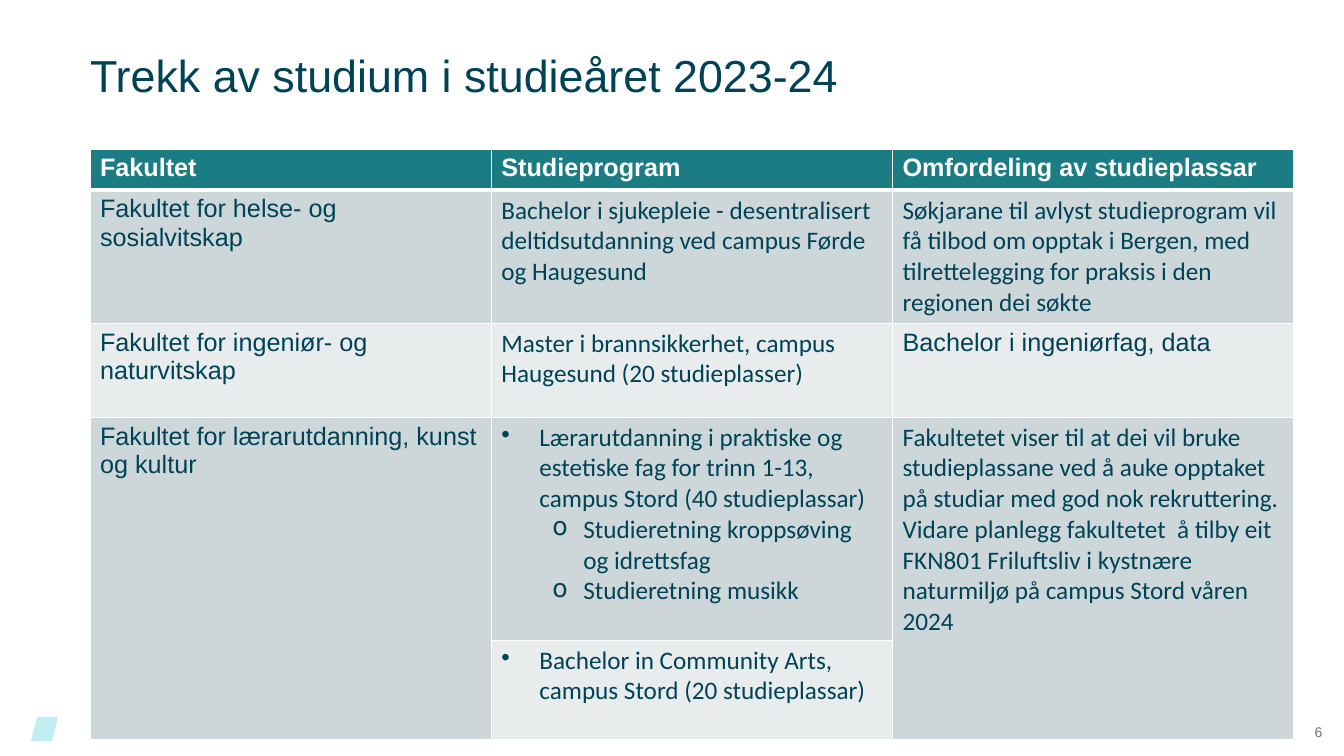
"""Build the slide on study programmes withdrawn in 2023-24."""
from dataclasses import dataclass

from lxml import etree
from pptx import Presentation
from pptx import util as u
from pptx.dml.color import RGBColor
from pptx.enum import shapes, text
from pptx.oxml.ns import qn

PX = 9071.43
NAVY = RGBColor(0x00, 0x43, 0x57)
TEAL = RGBColor(0x1B, 0x7C, 0x83)
DARK_BAND = RGBColor(0xCD, 0xD7, 0xD9)
LIGHT_BAND = RGBColor(0xE8, 0xEC, 0xED)
WHITE = RGBColor(0xFF, 0xFF, 0xFF)
AQUA = RGBColor(0xC1, 0xEC, 0xF2)
GREY = RGBColor(0x73, 0x73, 0x73)
SANS, HUMANIST = "Arial", "Calibri"


@dataclass(frozen=True)
class Bullet:
    char: str
    level: int
    margin: int
    hanging: int


@dataclass(frozen=True)
class Entry:
    words: str
    font: str = HUMANIST
    bullet: Bullet | None = None


@dataclass(frozen=True)
class Row:
    height: int
    fill: RGBColor
    cells: tuple[tuple[Entry, ...], ...]


PROGRAMME = Bullet("•", 0, 38, 38)
BRANCH = Bullet("o", 1, 82, 31)

ROWS = (
    Row(41, TEAL, (
        (Entry("Fakultet", SANS),),
        (Entry("Studieprogram", SANS),),
        (Entry("Omfordeling av studieplassar", SANS),))),
    Row(133, DARK_BAND, (
        (Entry("Fakultet for helse- og sosialvitskap", SANS),),
        (Entry("Bachelor i sjukepleie - desentralisert deltidsutdanning "
               "ved campus Førde og Haugesund"),),
        (Entry("Søkjarane til avlyst studieprogram vil få tilbod om opptak i Bergen, "
               "med tilrettelegging for praksis i den regionen dei søkte"),))),
    Row(94, LIGHT_BAND, (
        (Entry("Fakultet for ingeniør- og naturvitskap", SANS),),
        (Entry("Master i brannsikkerhet, campus Haugesund (20 studieplasser)"),),
        (Entry("Bachelor i ingeniørfag, data", SANS),))),
    Row(223, DARK_BAND, (
        (Entry("Fakultet for lærarutdanning, kunst og kultur", SANS),),
        (Entry("Lærarutdanning i praktiske og estetiske fag for trinn 1-13, "
               "campus Stord (40 studieplassar)", bullet=PROGRAMME),
         Entry("Studieretning kroppsøving og idrettsfag", bullet=BRANCH),
         Entry("Studieretning musikk", bullet=BRANCH)),
        (Entry("Fakultetet viser til at dei vil bruke studieplassane ved å auke opptaket "
               "på studiar med god nok rekruttering. Vidare planlegg fakultetet  å tilby eit "
               "FKN801 Friluftsliv i kystnære naturmiljø på campus Stord våren 2024"),))),
    Row(100, LIGHT_BAND, (
        (),
        (Entry("Bachelor in Community Arts, campus Stord (20 studieplassar)",
               bullet=PROGRAMME),),
        ())),
)


def px(length: int) -> int:
    """Turn pixels into EMU."""
    return round(length * PX)


def style(paragraph, font: str, size: int, color: RGBColor, bold: bool = False) -> None:
    """Set the font of a whole paragraph."""
    paragraph.font.name = font
    paragraph.font.size = u.Pt(size)
    paragraph.font.color.rgb = color
    paragraph.font.bold = bold


def set_frame(frame) -> None:
    """Give a text frame no insets and centre it vertically."""
    frame.margin_left = frame.margin_top = frame.margin_right = frame.margin_bottom = 0
    frame.vertical_anchor = text.MSO_ANCHOR.MIDDLE
    frame.auto_size = text.MSO_AUTO_SIZE.NONE
    frame.word_wrap = True


def add_bullet(paragraph, bullet: Bullet) -> None:
    """Hang a bullet in front of a paragraph."""
    paragraph.level = bullet.level
    properties = paragraph._p.get_or_add_pPr()
    properties.set("marL", str(px(bullet.margin)))
    properties.set("indent", str(-px(bullet.hanging)))
    mark = etree.Element(qn("a:buChar"), char=bullet.char)
    properties.insert(0, mark)


def add_borders(cell, top: int, bottom: int) -> None:
    """Draw white borders, with top and bottom widths in points."""
    properties = cell._tc.get_or_add_tcPr()
    widths = {"lnL": 1, "lnR": 1, "lnT": top, "lnB": bottom}
    for position, (side, width) in enumerate(widths.items()):
        line = etree.Element(qn(f"a:{side}"), w=str(u.Pt(width)))
        fill = etree.SubElement(line, qn("a:solidFill"))
        etree.SubElement(fill, qn("a:srgbClr"), val=str(WHITE))
        properties.insert(position, line)


def fill_cell(cell, entries: tuple[Entry, ...], fill: RGBColor, is_header: bool) -> None:
    """Write the entries into a cell and colour it."""
    cell.fill.solid()
    cell.fill.fore_color.rgb = fill
    for index, entry in enumerate(entries):
        frame = cell.text_frame
        paragraph = frame.add_paragraph() if index else frame.paragraphs[0]
        paragraph.text = entry.words
        style(paragraph, entry.font, 18, WHITE if is_header else NAVY, is_header)
        if entry.bullet:
            add_bullet(paragraph, entry.bullet)


def add_programmes(slide) -> None:
    """Add the table of faculties and programmes."""
    height = sum(row.height for row in ROWS)
    table = slide.shapes.add_table(
        len(ROWS), 3, px(90), px(149), px(1204), px(height)).table
    for index, row in enumerate(ROWS):
        table.rows[index].height = px(row.height)
        for column, entries in enumerate(row.cells):
            cell = table.cell(index, column)
            fill_cell(cell, entries, row.fill, index == 0)
            add_borders(cell, 3 if index == 1 else 1, 3 if index == 0 else 1)
    for column in (0, 2):
        table.cell(3, column).merge(table.cell(4, column))


def add_title(slide) -> None:
    """Place and fill the title."""
    title = slide.shapes.title
    title.left, title.top, title.width, title.height = px(90), 0, px(1204), px(149)
    set_frame(title.text_frame)
    heading = title.text_frame.paragraphs[0]
    heading.text = "Trekk av studium i studieåret 2023-24"
    heading.alignment = text.PP_ALIGN.LEFT
    style(heading, SANS, 32, NAVY)


def add_page_number(slide) -> None:
    """Add the page number in the corner."""
    corner = slide.shapes.add_textbox(px(1294), px(707), px(49), px(49))
    set_frame(corner.text_frame)
    number = corner.text_frame.paragraphs[0]
    number.text = "6"
    number.alignment = text.PP_ALIGN.CENTER
    style(number, SANS, 10, GREY)


def add_emblem(slide) -> None:
    """Add a plain emblem at the lower left."""
    emblem = slide.shapes.add_shape(
        shapes.MSO_SHAPE.PARALLELOGRAM, px(31), px(717), px(27), px(24))
    emblem.shadow.inherit = False
    emblem.fill.solid()
    emblem.fill.fore_color.rgb = AQUA
    emblem.line.fill.background()


def main() -> None:
    """Build and save the slide."""
    deck = Presentation()
    deck.slide_width, deck.slide_height = px(1344), px(756)
    slide = deck.slides.add_slide(deck.slide_layouts[5])
    add_emblem(slide)
    add_title(slide)
    add_programmes(slide)
    add_page_number(slide)
    deck.save("out.pptx")


if __name__ == "__main__":
    main()
